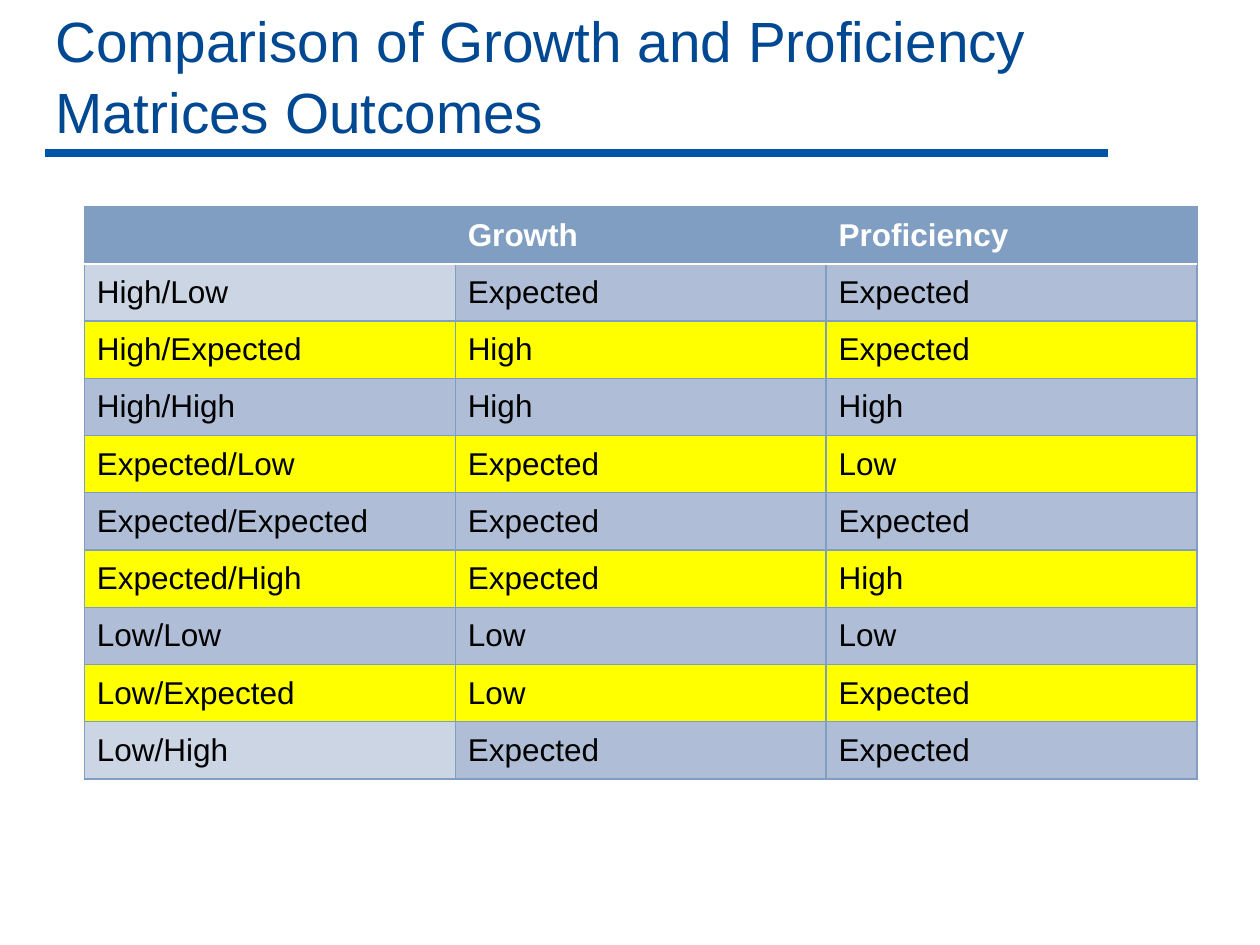
"""Build a slide that compares growth and proficiency matrix outcomes."""
from lxml import etree
from pptx import Presentation
from pptx.dml.color import RGBColor
from pptx.enum.shapes import MSO_CONNECTOR
from pptx.enum.text import MSO_ANCHOR
from pptx.oxml.ns import qn
from pptx.util import Pt

STRAIGHT = MSO_CONNECTOR.STRAIGHT
BOTTOM = MSO_ANCHOR.BOTTOM
MIDDLE = MSO_ANCHOR.MIDDLE

NAVY = RGBColor(0x00, 0x49, 0x92)
BLUE = RGBColor(0x00, 0x54, 0xA8)
STEEL = RGBColor(0x80, 0x9E, 0xC2)
BAND = RGBColor(0xAF, 0xBE, 0xD6)
PALE = RGBColor(0xCC, 0xD5, 0xE4)
YELLOW = RGBColor(0xFF, 0xFF, 0x00)
WHITE = RGBColor(0xFF, 0xFF, 0xFF)
BLACK = RGBColor(0x00, 0x00, 0x00)

TITLE = "Comparison of Growth and Proficiency \vMatrices Outcomes"
ROWS = [
    ("", "Growth", "Proficiency"),
    ("High/Low", "Expected", "Expected"),
    ("High/Expected", "High", "Expected"),
    ("High/High", "High", "High"),
    ("Expected/Low", "Expected", "Low"),
    ("Expected/Expected", "Expected", "Expected"),
    ("Expected/High", "Expected", "High"),
    ("Low/Low", "Low", "Low"),
    ("Low/Expected", "Low", "Expected"),
    ("Low/High", "Expected", "Expected"),
]
WIDTH, HEIGHT = 635.8, 327.4


def write(frame, text, size=18, color=BLACK, bold=False, spacing=None):
    para = frame.paragraphs[0]
    para.text = text
    para.line_spacing = spacing
    for run in para.runs:
        font = run.font
        font.name = "Arial"
        font.size = Pt(size)
        font.bold = bold
        font.color.rgb = color


def add_title(slide):
    box = slide.shapes.add_textbox(Pt(24.5), Pt(0), Pt(695.5), Pt(86.4))
    frame = box.text_frame
    frame.word_wrap = True
    frame.vertical_anchor = BOTTOM
    write(frame, TITLE, size=32.4, color=NAVY, spacing=1.04)


def add_rule(slide):
    rule = slide.shapes.add_connector(STRAIGHT, Pt(25.9), Pt(87.2), Pt(632.9), Pt(87.2))
    rule.line.color.rgb = BLUE
    rule.line.width = Pt(4.5)
    etree.SubElement(rule._element.spPr, qn("a:effectLst"))


def add_edge(cell, side, color, width):
    props = cell._tc.get_or_add_tcPr()
    edge = etree.SubElement(props, qn(f"a:ln{side}"), w=str(Pt(width)))
    fill = etree.SubElement(edge, qn("a:solidFill"))
    etree.SubElement(fill, qn("a:srgbClr"), val=str(color))


def pick_fill(row, col):
    if row == 0:
        return STEEL
    if row % 2 == 0:
        return YELLOW
    return PALE if col == 0 and row in (1, len(ROWS) - 1) else BAND


def style_cell(cell, row, col):
    head = row == 0
    white = {0: "B", 1: "T"}.get(row)
    for side in "LRTB":
        color, width = (WHITE, 1.5) if side == white else (STEEL, 0.79)
        add_edge(cell, side, color, width)
    cell.fill.solid()
    cell.fill.fore_color.rgb = pick_fill(row, col)
    cell.vertical_anchor = MIDDLE
    write(cell.text_frame, ROWS[row][col], color=WHITE if head else BLACK, bold=head)


def add_grid(slide):
    count, span = len(ROWS), len(ROWS[0])
    shape = slide.shapes.add_table(count, span, Pt(48.2), Pt(118), Pt(WIDTH), Pt(HEIGHT))
    table = shape.table
    table.horz_banding = False
    for column in table.columns:
        column.width = Pt(WIDTH / span)
    for row in range(count):
        table.rows[row].height = Pt(HEIGHT / count)
        for col in range(span):
            style_cell(table.cell(row, col), row, col)


def main():
    deck = Presentation()
    deck.slide_width, deck.slide_height = Pt(720), Pt(540)
    slide = deck.slides.add_slide(deck.slide_layouts[6])
    add_rule(slide)
    add_title(slide)
    add_grid(slide)
    deck.save("out.pptx")


if __name__ == "__main__":
    main()
